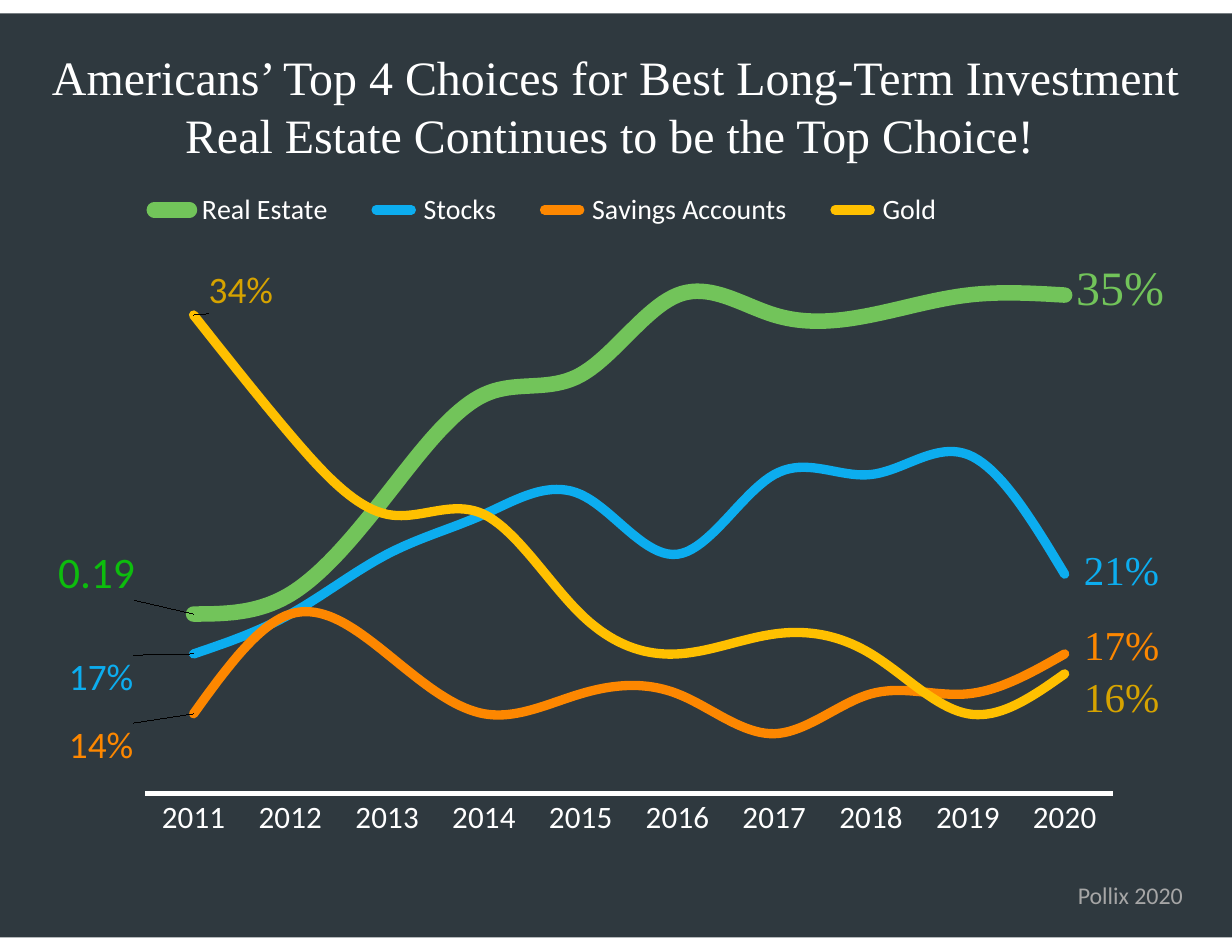
from lxml.etree import SubElement
from pptx import Presentation
from pptx.chart.data import CategoryChartData
from pptx.dml.color import RGBColor
from pptx.enum.chart import XL_CHART_TYPE as ChartType
from pptx.enum.chart import XL_LABEL_POSITION as LabelPosition
from pptx.enum.chart import XL_LEGEND_POSITION as LegendPosition
from pptx.enum.chart import XL_MARKER_STYLE as MarkerStyle
from pptx.enum.chart import XL_TICK_LABEL_POSITION as TickLabelPosition
from pptx.enum.chart import XL_TICK_MARK as TickMark
from pptx.enum.shapes import MSO_SHAPE as Shape
from pptx.enum.text import MSO_AUTO_SIZE as AutoSize
from pptx.enum.text import PP_ALIGN as Align
from pptx.oxml.ns import qn
from pptx.util import Inches, Pt

SLATE = RGBColor(0x2F, 0x39, 0x3F)
WHITE = RGBColor(0xFF, 0xFF, 0xFF)
BLACK = RGBColor(0x00, 0x00, 0x00)
GREY = RGBColor(0xA6, 0xA6, 0xA6)
GREEN = RGBColor(0x72, 0xC4, 0x5A)
BRIGHT_GREEN = RGBColor(0x0D, 0xBD, 0x0D)
BLUE = RGBColor(0x0C, 0xAD, 0xEF)
ORANGE = RGBColor(0xFD, 0x87, 0x00)
GOLD = RGBColor(0xFF, 0xC0, 0x00)
DARK_GOLD = RGBColor(0xD6, 0xA3, 0x00)

SANS = "Calibri"
SERIF = "Times New Roman"
YEARS = [str(year) for year in range(2011, 2021)]

INVESTMENTS = [
    (" Real Estate", (19, 20, 25, 30, 31, 35, 34, 34, 35, 35), GREEN, 10,
     ("0.19", BRIGHT_GREEN, 28, -0.13, -0.05)),
    (" Stocks", (17, 19, 22, 24, 25, 22, 26, 26, 27, 21), BLUE, 6,
     (None, BLUE, 24, -0.12, 0.03)),
    (" Savings Accounts", (14, 19, 17, 14, 15, 15, 13, 15, 15, 17), ORANGE, 6,
     (None, ORANGE, 24, -0.12, 0.04)),
    (" Gold", (34, 28, 24, 24, 19, 17, 18, 17, 14, 16), GOLD, 6,
     (None, DARK_GOLD, 24, 0.01, -0.03)),
]

END_LABELS = [
    ("35%", 9.51, 2.25, 0.99, 0.62, 30.8, GREEN, Align.LEFT),
    ("21%", 9.58, 4.81, 0.88, 0.55, 26.4, BLUE, Align.LEFT),
    ("16%", 9.57, 5.95, 0.88, 0.55, 26.4, DARK_GOLD, Align.RIGHT),
    ("17%", 9.57, 5.48, 0.88, 0.55, 26.4, ORANGE, Align.RIGHT),
]


def style_font(font, size, color, name=SANS):
    font.size = Pt(size)
    font.name = name
    font.color.rgb = color


def add_background(shapes):
    panel = shapes.add_shape(Shape.RECTANGLE, 0, Inches(0.12), Inches(11), Inches(8.25))
    panel.shadow.inherit = False
    panel.fill.solid()
    panel.fill.fore_color.rgb = SLATE
    panel.line.fill.background()


def add_text(shapes, text, left, top, width, height, size, color, align,
             font_name=SERIF, wrap=False):
    box = shapes.add_textbox(Inches(left), Inches(top), Inches(width), Inches(height))
    frame = box.text_frame
    frame.word_wrap = wrap
    frame.auto_size = AutoSize.SHAPE_TO_FIT_TEXT
    para = frame.paragraphs[0]
    para.text = text
    para.alignment = align
    for span in para.runs:
        style_font(span.font, size, color, font_name)


def set_layout(parent, index, **settings):
    for old in parent.findall(qn("c:layout")):
        parent.remove(old)
    layout = SubElement(parent, qn("c:layout"))
    manual = SubElement(layout, qn("c:manualLayout"))
    for name, value in settings.items():
        SubElement(manual, qn(f"c:{name}")).set("val", str(value))
    parent.insert(index, layout)


def add_start_label(series, text, color, size, offset_x, offset_y):
    label = series.points[0].data_label
    if text:
        label.text_frame.text = text
        style_font(label.text_frame.paragraphs[0].runs[0].font, size, color)
    else:
        style_font(label.font, size, color)
    label.position = LabelPosition.RIGHT
    series.data_labels.show_value = False
    element = series._element.find(qn("c:dLbls")).find(qn("c:dLbl"))
    set_layout(element, 1, x=offset_x, y=offset_y)


def style_series(series, color, width):
    series.smooth = True
    series.marker.style = MarkerStyle.NONE
    series.format.line.color.rgb = color
    series.format.line.width = Pt(width)
    series._element.find(qn("c:spPr")).find(qn("a:ln")).set("cap", "rnd")


def style_axes(chart):
    years = chart.category_axis
    years.major_tick_mark = TickMark.NONE
    years.minor_tick_mark = TickMark.NONE
    years.tick_label_position = TickLabelPosition.NEXT_TO_AXIS
    years.format.line.color.rgb = WHITE
    years.format.line.width = Pt(3)
    style_font(years.tick_labels.font, 20, WHITE)
    shares = chart.value_axis
    shares.minimum_scale = 0.1
    shares.maximum_scale = 0.4
    shares.has_major_gridlines = False
    shares.tick_labels.number_format = "0%"
    shares.tick_labels.number_format_is_linked = False
    shares.visible = False


def add_investment_chart(shapes):
    data = CategoryChartData(number_format="0%")
    data.categories = YEARS
    for name, percentages, *_ in INVESTMENTS:
        data.add_series(name, [percentage / 100 for percentage in percentages])
    chart = shapes.add_chart(ChartType.LINE, Inches(0.52), Inches(0.8),
                             Inches(9.63), Inches(7.16), data).chart
    chart.has_title = False
    style_font(chart.font, 10, BLACK)
    style_axes(chart)
    for series, (_, _, color, width, label) in zip(chart.plots[0].series, INVESTMENTS):
        style_series(series, color, width)
        add_start_label(series, *label)
    chart.has_legend = True
    chart.legend.position = LegendPosition.RIGHT
    chart.legend.include_in_layout = False
    style_font(chart.legend.font, 18, WHITE)
    set_layout(chart.legend._element, 1, xMode="edge", yMode="edge",
               x=0.05, y=0.12, w=0.8, h=0.06)
    plot_area = chart._chartSpace.chart.plotArea
    set_layout(plot_area, 0, layoutTarget="inner", xMode="edge", yMode="edge",
               x=0.078, y=0.132, w=0.9, h=0.746)


def main():
    deck = Presentation()
    deck.slide_width = Inches(11)
    deck.slide_height = Inches(8.5)
    page = deck.slides.add_slide(deck.slide_layouts[6])
    add_background(page.shapes)
    add_investment_chart(page.shapes)
    add_text(page.shapes,
             "Americans’ Top 4 Choices for Best Long-Term Investment\v"
             "Real Estate Continues to be the Top Choice! ",
             0, 0.38, 11, 1.14, 30.8, WHITE, Align.CENTER, wrap=True)
    add_text(page.shapes, "Pollix 2020", 9.02, 7.81, 1.64, 0.36, 15.4, GREY,
             Align.RIGHT, SANS, wrap=True)
    end_labels = page.shapes.add_group_shape()
    for label in END_LABELS:
        add_text(end_labels.shapes, *label)
    deck.save("out.pptx")


if __name__ == "__main__":
    main()
